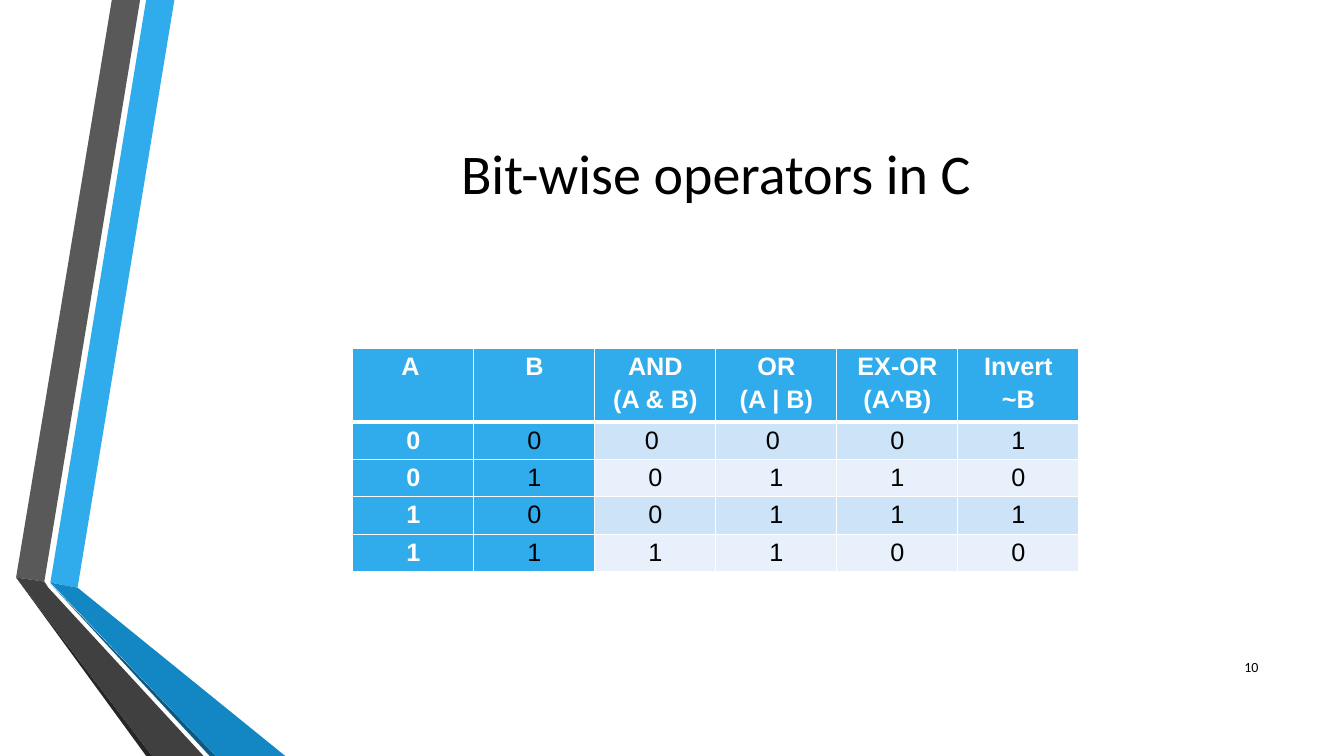
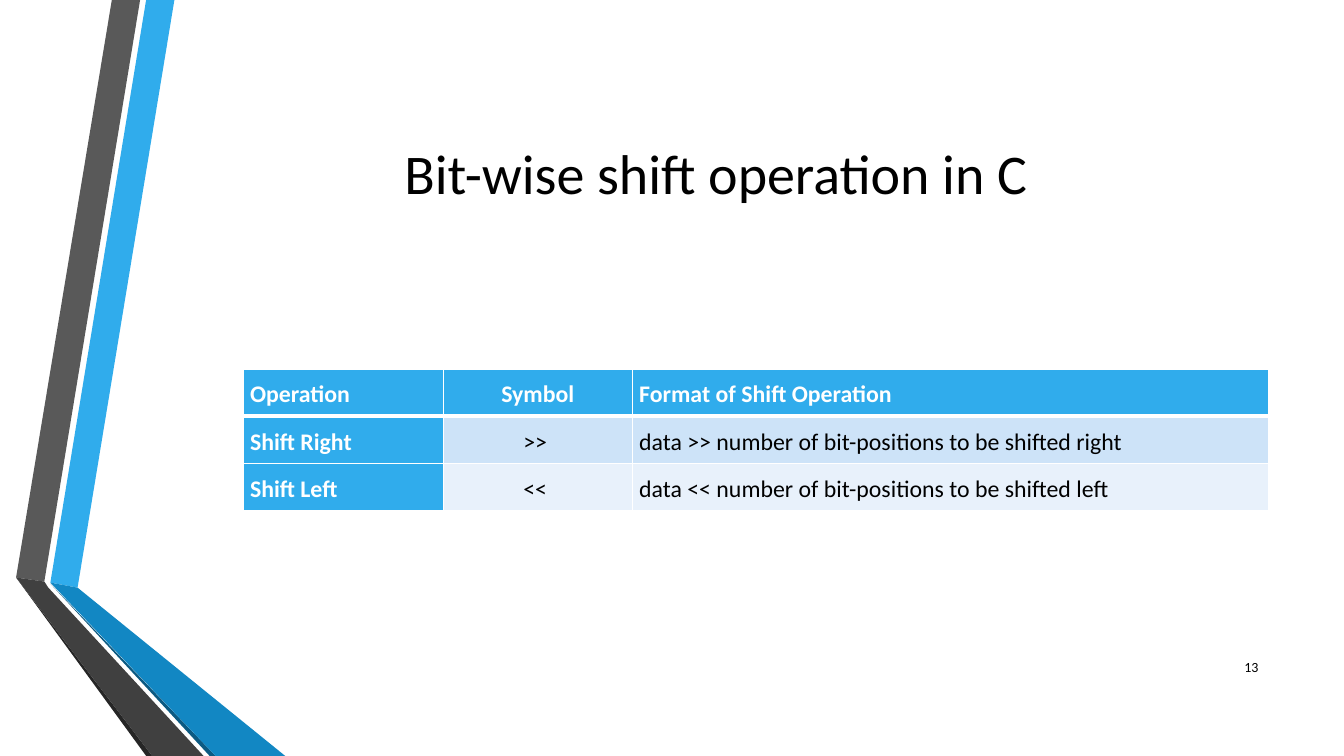
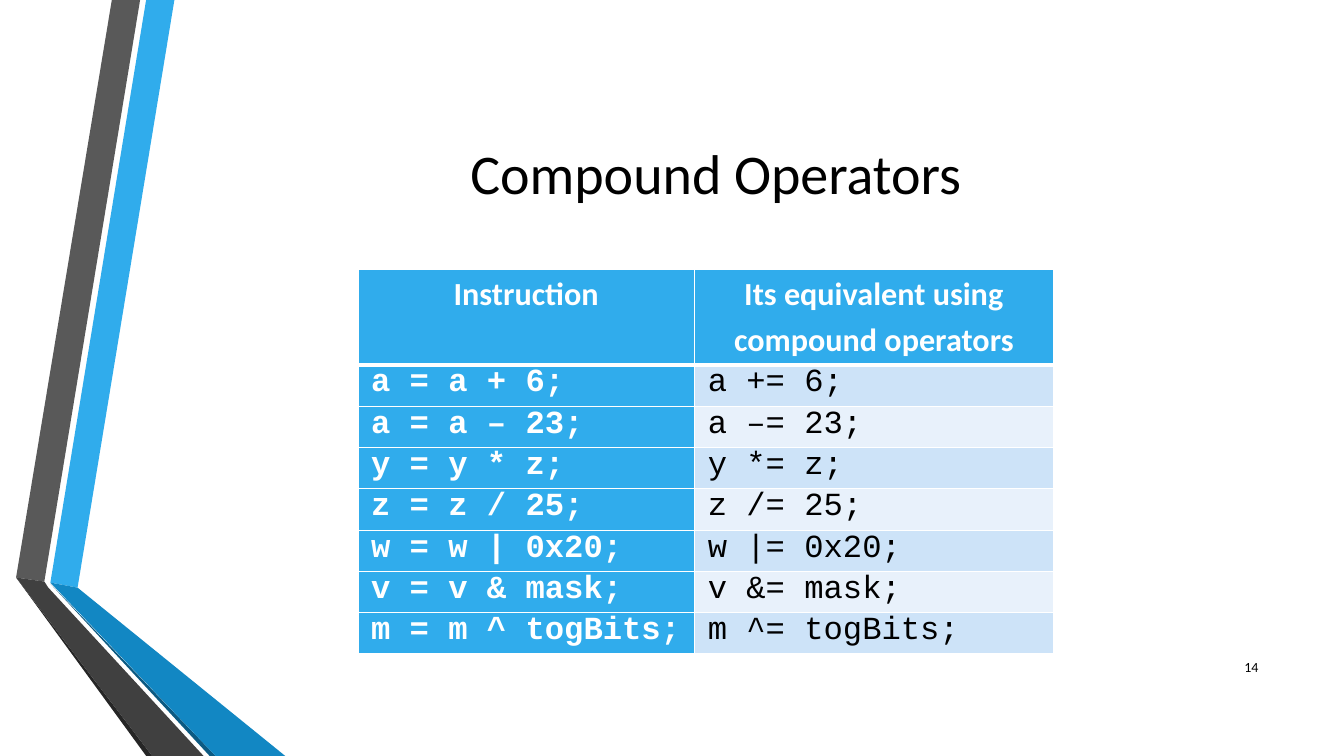
"""Build three slides of operator tables for a C programming course."""
import pptx
import pptx.util
import pptx.dml.color
import pptx.enum.text
import pptx.oxml
import pptx.oxml.ns

PX = 9144
SLIDE_SIZE = (1333, 750)
TITLE_BOX = (162, 75, 1096, 192)
NUMBER_BOX = (1198, 642, 60, 40)

RGB = pptx.dml.color.RGBColor
BLUE = RGB(0x30, 0xAC, 0xEC)
MID_BLUE = RGB(0x12, 0x87, 0xC3)
DARK_BLUE = RGB(0x0C, 0x5A, 0x82)
GRAY = RGB(0x59, 0x59, 0x59)
DARK_GRAY = RGB(0x40, 0x40, 0x40)
CHARCOAL = RGB(0x26, 0x26, 0x26)
STRIPE = RGB(0xCD, 0xE3, 0xF8)
PALE_STRIPE = RGB(0xE8, 0xF1, 0xFB)
WHITE = RGB(0xFF, 0xFF, 0xFF)
BLACK = RGB(0, 0, 0)

LEFT = pptx.enum.text.PP_ALIGN.LEFT
CENTER = pptx.enum.text.PP_ALIGN.CENTER
RIGHT = pptx.enum.text.PP_ALIGN.RIGHT
TOP = pptx.enum.text.MSO_ANCHOR.TOP
MIDDLE = pptx.enum.text.MSO_ANCHOR.MIDDLE

BANDS = [
    (BLUE, [(50, 578), (77, 583), (173, 0), (145, 0)]),
    (GRAY, [(139, 0), (111, 0), (16, 573), (44, 577)]),
    (CHARCOAL, [(16, 573), (145, 750), (151, 750)]),
    (DARK_BLUE, [(50, 579), (208, 750), (214, 750)]),
    (MID_BLUE, [(50, 578), (214, 750), (283, 750), (77, 583)]),
    (DARK_GRAY, [(202, 750), (48, 583), (44, 577), (16, 573), (151, 750)]),
]

SLIDES = [
    {
        "title": "Bit-wise operators in C",
        "number": 10,
        "at": (350, 346),
        "columns": [120] * 6,
        "heights": (73, 37),
        "size": 18,
        "fonts": ("Arial", "Arial"),
        "aligns": ([CENTER] * 6, [CENTER] * 6),
        "spacing": 1.15,
        "anchor": TOP,
        "margin": 7,
        "blue_columns": 2,
        "rows": [
            ("A ", "B", "AND\n(A & B)", "OR\n(A | B)", "EX-OR\n(A^B)", "Invert\n~B"),
            ("0", "0", "0 ", "0 ", "0", "1"),
            ("0", "1", "0", "1", "1", "0"),
            ("1", "0", "0", "1", "1", "1"),
            ("1", "1", "1", "1", "0", "0"),
        ],
    },
    {
        "title": "Bit-wise shift operation in C",
        "number": 13,
        "at": (241, 366),
        "columns": [199, 187, 631],
        "heights": (47, 47),
        "size": 17,
        "fonts": ("Calibri", "Calibri"),
        "aligns": ([LEFT, CENTER, LEFT], [LEFT, CENTER, LEFT]),
        "spacing": 1.15,
        "anchor": MIDDLE,
        "margin": 7,
        "blue_columns": 1,
        "rows": [
            ("Operation", "Symbol", "Format of Shift Operation"),
            ("Shift Right", ">> ", "data >> number of bit-positions to be shifted right"),
            ("Shift Left", "<< ", "data << number of bit-positions to be shifted left"),
        ],
    },
    {
        "title": "Compound Operators",
        "number": 14,
        "at": (355, 267),
        "columns": [334, 356],
        "heights": (95, 41),
        "size": 23,
        "fonts": ("Calibri", "Courier New"),
        "aligns": ([CENTER] * 2, [LEFT] * 2),
        "spacing": 1.0,
        "anchor": TOP,
        "margin": 13,
        "blue_columns": 1,
        "rows": [
            ("Instruction", "Its equivalent using compound operators"),
            ("a = a + 6;", "a += 6;"),
            ("a = a – 23;", "a –= 23;"),
            ("y = y * z;", "y *= z;"),
            ("z = z / 25;", "z /= 25;"),
            ("w = w | 0x20;", "w |= 0x20;"),
            ("v = v & mask;", "v &= mask;"),
            ("m = m ^ togBits;", "m ^= togBits;"),
        ],
    },
]


def emu(lengths):
    return [length * PX for length in lengths]


def format_text(text_frame, font_name, size, color, align, bold=False, spacing=1.0):
    for paragraph in text_frame.paragraphs:
        paragraph.alignment = align
        paragraph.line_spacing = spacing
        paragraph.font.name = font_name
        paragraph.font.size = pptx.util.Pt(size)
        paragraph.font.color.rgb = color
        paragraph.font.bold = bold


def add_bands(slide, layout):
    for color, points in BANDS:
        builder = slide.shapes.build_freeform(*points[0], scale=PX)
        builder.add_line_segments(points[1:], close=True)
        band = builder.convert_to_shape()
        band.shadow.inherit = False
        band.fill.solid()
        band.fill.fore_color.rgb = color
        band.line.fill.background()
        layout.shapes.element.append(band.element)


def add_title(slide, text):
    title = slide.shapes.title
    title.left, title.top, title.width, title.height = emu(TITLE_BOX)
    title.text_frame.text = text
    title.text_frame.vertical_anchor = MIDDLE
    format_text(title.text_frame, "Calibri", 40, BLACK, CENTER)


def add_number(slide, number):
    text_frame = slide.shapes.add_textbox(*emu(NUMBER_BOX)).text_frame
    text_frame.word_wrap = True
    text_frame.vertical_anchor = MIDDLE
    text_frame.text = str(number)
    format_text(text_frame, "Calibri", 10, BLACK, RIGHT)


def set_borders(cell, row):
    widths = {"L": 1, "R": 1, "T": 3 if row == 1 else 1, "B": 3 if row == 0 else 1}
    properties = cell._tc.get_or_add_tcPr()
    for index, (side, width) in enumerate(widths.items()):
        border = pptx.oxml.parse_xml(
            f'<a:ln{side} {pptx.oxml.ns.nsdecls("a")} w="{pptx.util.Pt(width)}">'
            f'<a:solidFill><a:srgbClr val="{WHITE}"/></a:solidFill></a:ln{side}>'
        )
        properties.insert(index, border)


def add_operator_table(slide, content):
    rows, columns = content["rows"], content["columns"]
    header_height, body_height = content["heights"]
    heights = [header_height] + [body_height] * (len(rows) - 1)
    box = emu((*content["at"], sum(columns), sum(heights)))
    table = slide.shapes.add_table(len(rows), len(columns), *box).table
    table.first_col = True
    for column, width in zip(table.columns, emu(columns)):
        column.width = width
    for table_row, height in zip(table.rows, emu(heights)):
        table_row.height = height
    for row, texts in enumerate(rows):
        for column, text in enumerate(texts):
            header = row == 0
            strong = header or column == 0
            cell = table.cell(row, column)
            cell.text = text
            cell.vertical_anchor = content["anchor"]
            cell.margin_left = cell.margin_right = content["margin"] * PX
            cell.margin_top = cell.margin_bottom = 0
            cell.fill.solid()
            if header or column < content["blue_columns"]:
                cell.fill.fore_color.rgb = BLUE
            else:
                cell.fill.fore_color.rgb = STRIPE if row % 2 else PALE_STRIPE
            set_borders(cell, row)
            part = 0 if header else 1
            format_text(
                cell.text_frame,
                content["fonts"][part],
                content["size"],
                WHITE if strong else BLACK,
                content["aligns"][part][column],
                strong,
                1.15 if header else content["spacing"],
            )


def main():
    presentation = pptx.Presentation()
    presentation.slide_width, presentation.slide_height = emu(SLIDE_SIZE)
    layout = presentation.slide_layouts[5]
    for index, content in enumerate(SLIDES):
        slide = presentation.slides.add_slide(layout)
        if index == 0:
            add_bands(slide, layout)
        add_title(slide, content["title"])
        add_operator_table(slide, content)
        add_number(slide, content["number"])
    presentation.save("out.pptx")


if __name__ == "__main__":
    main()
